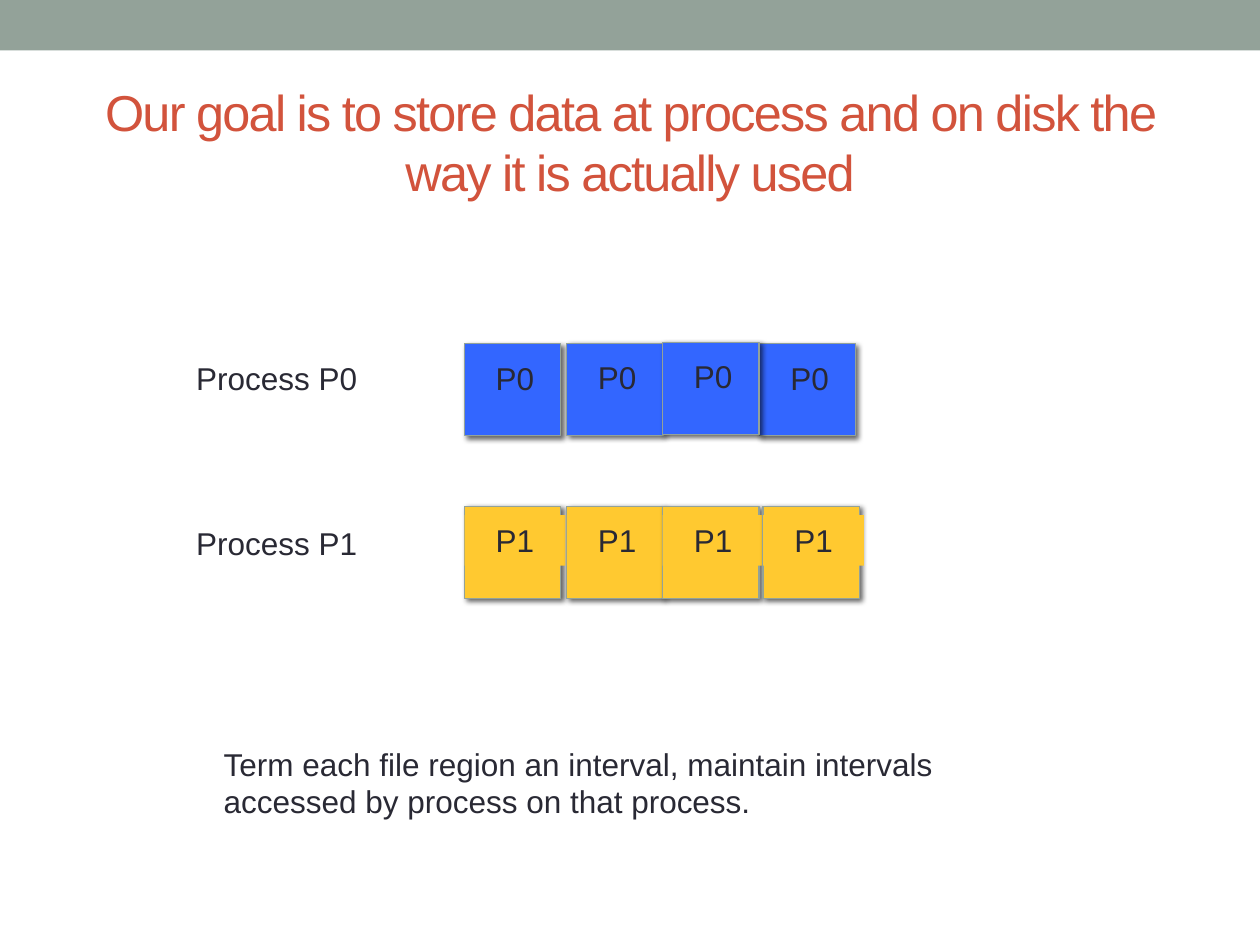
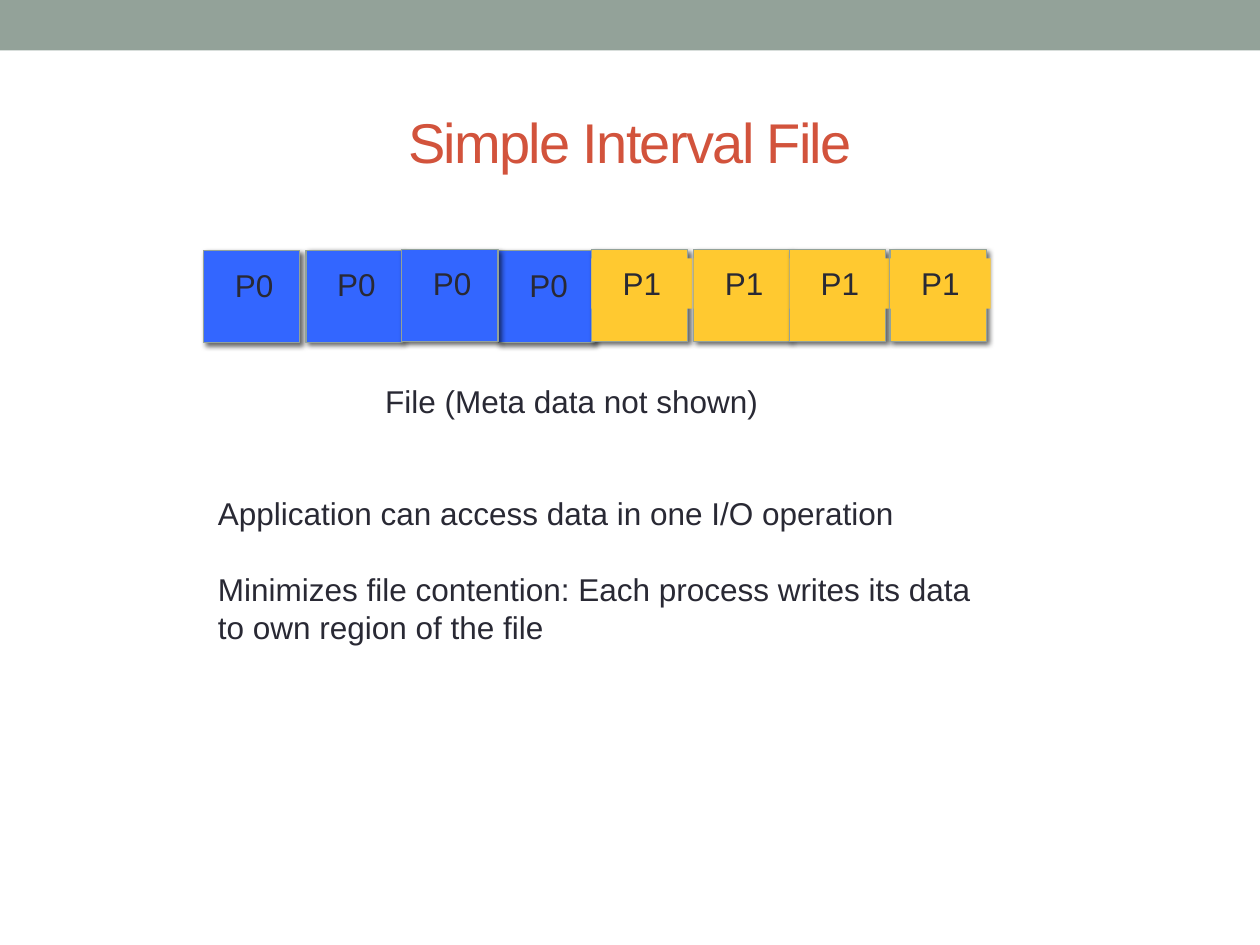
from lxml.etree import SubElement
from pptx import Presentation
from pptx.dml.color import RGBColor
from pptx.enum.shapes import MSO_SHAPE as Shape
from pptx.enum.text import MSO_ANCHOR as Anchor, MSO_AUTO_SIZE as AutoSize, PP_ALIGN as Align
from pptx.oxml.ns import qn
from pptx.util import Pt

SAGE = RGBColor(0x93, 0xA2, 0x99)
RUST = RGBColor(0xD2, 0x53, 0x3C)
INK = RGBColor(0x29, 0x29, 0x34)
BLUE = RGBColor(0x33, 0x66, 0xFF)
YELLOW = RGBColor(0xFF, 0xC9, 0x30)

FONT = "Arial"
BODY_SIZE = 18
TITLE_BOX = (36, 41.8, 648, 77.8)
BLOCK_WIDTH, BLOCK_HEIGHT = 55, 52.6
LABEL_WIDTH, LABEL_HEIGHT, LABEL_DROP = 57.6, 28.8, 5

# Each process's blocks in stacking order, as (right, down) from the row's corner.
PROCESSES = {
    "P0": {"fill": BLUE, "label_fill": None,
           "offsets": [(0, 0), (58.4, -0.2), (168.4, 0), (113.2, -0.7)]},
    "P1": {"fill": YELLOW, "label_fill": YELLOW,
           "offsets": [(0, 0), (58.4, 0), (113.2, 0), (170.6, 0)]},
}

# Rows hold (process, left, top); texts hold (box, paragraphs).
SLIDES = [
    {
        "title": "Our goal is to store data at process and on disk the way it is actually used",
        "title_size": 28.8,
        "rows": [("P0", 265.5, 196.4), ("P1", 265.5, 289.4)],
        "texts": [
            ((105, 201.9, 120, 28.8), ["Process P0"]),
            ((105, 296.2, 120, 28.8), ["Process P1"]),
            ((120.7, 422, 498, 50.9),
             ["Term each file region an interval, maintain intervals "
              "accessed by process on that process."]),
        ],
    },
    {
        "title": "Simple Interval File",
        "title_size": 32,
        "rows": [("P0", 116.4, 143.3), ("P1", 338, 142.6)],
        "texts": [
            ((213, 214.8, 293, 28.8), ["File (Meta data not shown)"]),
            ((117.4, 279, 450, 94.3),
             ["Application can access data in one I/O operation",
              "Minimizes file contention: Each process writes its data "
              "to own region of the file"]),
        ],
    },
]


def in_points(*lengths):
    return [Pt(length) for length in lengths]


def style_runs(text_frame, size, color, align):
    for paragraph in text_frame.paragraphs:
        paragraph.alignment = align
        for run in paragraph.runs:
            run.font.name = FONT
            run.font.size = Pt(size)
            run.font.color.rgb = color


def add_rectangle(shapes, box, fill):
    rectangle = shapes.add_shape(Shape.RECTANGLE, *in_points(*box))
    rectangle.shadow.inherit = False
    rectangle.fill.solid()
    rectangle.fill.fore_color.rgb = fill
    rectangle.line.fill.background()
    return rectangle


def cast_shadow(block):
    """Fill the block's empty effect list with a soft shadow to the lower right."""
    effects = block.element.spPr.find(qn("a:effectLst"))
    shadow = SubElement(effects, qn("a:outerShdw"), blurRad=str(Pt(3)), dist=str(Pt(2)),
                        dir="2700000", algn="br", rotWithShape="0")
    black = SubElement(shadow, qn("a:srgbClr"), val="000000")
    SubElement(black, qn("a:alpha"), val="60000")


def add_text(shapes, box, paragraphs, align=Align.LEFT, fill=None):
    text_box = shapes.add_textbox(*in_points(*box))
    if fill is not None:
        text_box.fill.solid()
        text_box.fill.fore_color.rgb = fill
    frame = text_box.text_frame
    frame.word_wrap = True
    frame.text = "\n".join(paragraphs)
    for paragraph in frame.paragraphs[1:]:
        paragraph.space_before = Pt(BODY_SIZE * 1.2)
    style_runs(frame, BODY_SIZE, INK, align)


def add_block_row(slide, process, left, top):
    look = PROCESSES[process]
    row = slide.shapes.add_group_shape().shapes
    for right, down in look["offsets"]:
        x, y = left + right, top + down
        block = add_rectangle(row, (x, y, BLOCK_WIDTH, BLOCK_HEIGHT), look["fill"])
        block.line.color.rgb = SAGE
        block.line.width = Pt(0.75)
        cast_shadow(block)
        add_text(row, (x, y + LABEL_DROP, LABEL_WIDTH, LABEL_HEIGHT), [process],
                 Align.CENTER, look["label_fill"])


def set_title(slide, title, size):
    placeholder = slide.shapes.title
    placeholder.left, placeholder.top, placeholder.width, placeholder.height = in_points(*TITLE_BOX)
    frame = placeholder.text_frame
    frame.text = title
    frame.auto_size = AutoSize.NONE
    frame.vertical_anchor = Anchor.MIDDLE
    style_runs(frame, size, RUST, Align.CENTER)
    for run in frame.paragraphs[0].runs:
        run.font._element.set("spc", "-100")


def add_layout_band(layout, slide):
    """Draw the top band on a slide, then move it behind everything on the layout."""
    band = add_rectangle(slide.shapes, (0, 0, 720, 28.8), SAGE)
    layout.shapes.element.insert(2, band.element)


def main():
    deck = Presentation()
    deck.slide_width, deck.slide_height = in_points(720, 540)
    layout = deck.slide_layouts.get_by_name("Title Only")
    for content in SLIDES:
        slide = deck.slides.add_slide(layout)
        set_title(slide, content["title"], content["title_size"])
        for row in content["rows"]:
            add_block_row(slide, *row)
        for box, paragraphs in content["texts"]:
            add_text(slide.shapes, box, paragraphs)
    add_layout_band(layout, deck.slides[0])
    deck.save("out.pptx")


if __name__ == "__main__":
    main()
